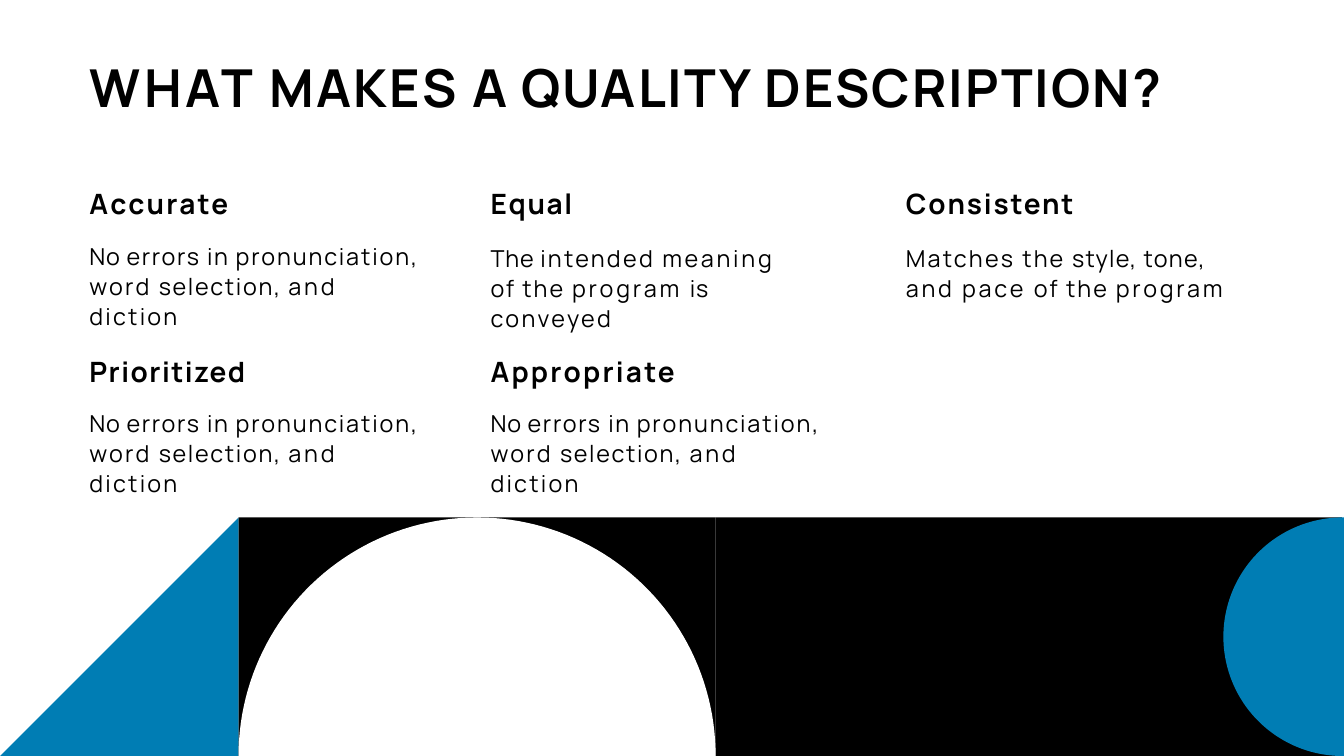
import math
from typing import NamedTuple

from pptx import Presentation
from pptx.dml.color import RGBColor
from pptx.enum import shapes, text
from pptx.util import Inches, Pt

BLACK = RGBColor(0x00, 0x00, 0x00)
WHITE = RGBColor(0xFF, 0xFF, 0xFF)
BLUE = RGBColor(0x00, 0x7D, 0xB4)
FONT = "Manrope"

PAGE_WIDTH, PAGE_HEIGHT = 20, 11.25
BAND = 3.55
BAND_TOP = PAGE_HEIGHT - BAND
COLUMNS = (1.32, 7.29, 13.47)
HEADING_TOPS = (2.76, 5.27)


class Span(NamedTuple):
    words: str
    spacing: float


class Quality(NamedTuple):
    column: int
    row: int
    heading: Span
    heading_width: float
    body_top: float
    body_width: float
    body: list[Span]


TITLE = [Span("WHAT ", 4), Span("MAKES ", 2.5), Span("A QUALITY DESCRIPTION?", 2.2)]
NO_ERRORS = [
    Span("No ", 1), Span("errors ", 1.8), Span("in ", 1.6), Span("pronunciation, ", 2.1),
    Span("word ", 2.5), Span("selection, ", 1.8), Span("and ", 3), Span("diction", 2.4),
]
MEANING = [
    Span("The ", 1), Span("intended ", 2.5), Span("meaning ", 3), Span("of ", 1.8),
    Span("the ", 2.2), Span("program ", 3.1), Span("is ", 1), Span("conveyed", 2.5),
]
STYLE = [
    Span("Matches ", 2.4), Span("the ", 2.2), Span("style, ", 1.3), Span("tone, ", 1.5),
    Span("and pace ", 3), Span("of ", 2), Span("the ", 2.2), Span("program", 3),
]
QUALITIES = [
    Quality(0, 0, Span("Accurate", 2.4), 2.49, 3.56, 5.02, NO_ERRORS),
    Quality(0, 1, Span("Prioritized", 1.6), 2.78, 6.05, 5.02, NO_ERRORS),
    Quality(1, 0, Span("Equal", 1.8), 1.71, 3.59, 4.68, MEANING),
    Quality(1, 1, Span("Appropriate", 2.4), 3.12, 6.05, 5.02, NO_ERRORS),
    Quality(2, 0, Span("Consistent", 2), 2.69, 3.59, 4.73, STYLE),
]


def paint(shape, color: RGBColor) -> None:
    shape.shadow.inherit = False
    shape.fill.solid()
    shape.fill.fore_color.rgb = color
    shape.line.fill.background()


def add_block(slide, left: float, width: float) -> None:
    block = slide.shapes.add_shape(
        shapes.MSO_SHAPE.RECTANGLE,
        Inches(left), Inches(BAND_TOP), Inches(width), Inches(BAND))
    paint(block, BLACK)


def add_polygon(slide, points: list[tuple[float, float]], color: RGBColor) -> None:
    corners = [(Inches(x), Inches(y)) for x, y in points]
    builder = slide.shapes.build_freeform(*corners[0], scale=1.0)
    builder.add_line_segments(corners[1:], close=True)
    paint(builder.convert_to_shape(), color)


def arc(x: float, y: float, radius: float, start: int, end: int) -> list[tuple[float, float]]:
    """Points on a circle, with angles in degrees clockwise from the right."""
    angles = [math.radians(degree) for degree in range(start, end + 1, 2)]
    return [(x + radius * math.cos(a), y + radius * math.sin(a)) for a in angles]


def write(frame, spans: list[Span], size: float, bold: bool, inset: float,
          indent: float, line_spacing: float = 1.0) -> None:
    frame.margin_left = frame.margin_right = frame.margin_bottom = 0
    frame.margin_top = Inches(inset)
    frame.word_wrap = True
    frame.auto_size = text.MSO_AUTO_SIZE.SHAPE_TO_FIT_TEXT
    frame.vertical_anchor = text.MSO_ANCHOR.TOP
    para = frame.paragraphs[0]
    para.alignment = text.PP_ALIGN.LEFT
    para.space_before = Pt(1)
    para.line_spacing = line_spacing
    properties = para._p.get_or_add_pPr()
    properties.set("marL", str(Inches(indent)))
    properties.set("indent", "0")
    for span in spans:
        run = para.add_run()
        run.text = span.words
        run.font.name = FONT
        run.font.size = Pt(size)
        run.font.bold = bold
        run.font.color.rgb = BLACK
        run.font._element.set("spc", str(round(span.spacing * 100)))


def add_quality(slide, quality: Quality) -> None:
    left = Inches(COLUMNS[quality.column])
    heading = slide.shapes.add_textbox(
        left, Inches(HEADING_TOPS[quality.row]), Inches(quality.heading_width), Inches(0.52))
    write(heading.text_frame, [quality.heading], 30, True, 0.01, 0.01)
    body = slide.shapes.add_textbox(
        left, Inches(quality.body_top), Inches(quality.body_width), Inches(1.37))
    write(body.text_frame, quality.body, 25, False, 0.01, 0.01, 1.07)


def main() -> None:
    deck = Presentation()
    deck.slide_width, deck.slide_height = Inches(PAGE_WIDTH), Inches(PAGE_HEIGHT)
    slide = deck.slides.add_slide(deck.slide_layouts.get_by_name("Title Only"))
    slide.background.fill.solid()
    slide.background.fill.fore_color.rgb = WHITE

    add_block(slide, 3 * BAND, 9.32)
    add_polygon(slide, [(0, PAGE_HEIGHT), (BAND, BAND_TOP), (BAND, PAGE_HEIGHT)], BLUE)
    add_block(slide, BAND, 2 * BAND)
    radius = BAND / 2
    half_disc = arc(19.98, BAND_TOP + radius, radius, 90, 270)
    add_polygon(slide, half_disc + [(PAGE_WIDTH, BAND_TOP), (PAGE_WIDTH, PAGE_HEIGHT)], BLUE)
    add_polygon(slide, arc(2 * BAND, PAGE_HEIGHT, BAND, 180, 360), WHITE)

    title = slide.shapes.title
    title.left, title.top = Inches(1.11), Inches(0.6)
    title.width, title.height = Inches(17.78), Inches(1.16)
    write(title.text_frame, TITLE, 56, True, 0.22, 0.22)
    for quality in QUALITIES:
        add_quality(slide, quality)
    deck.save("out.pptx")


if __name__ == "__main__":
    main()
